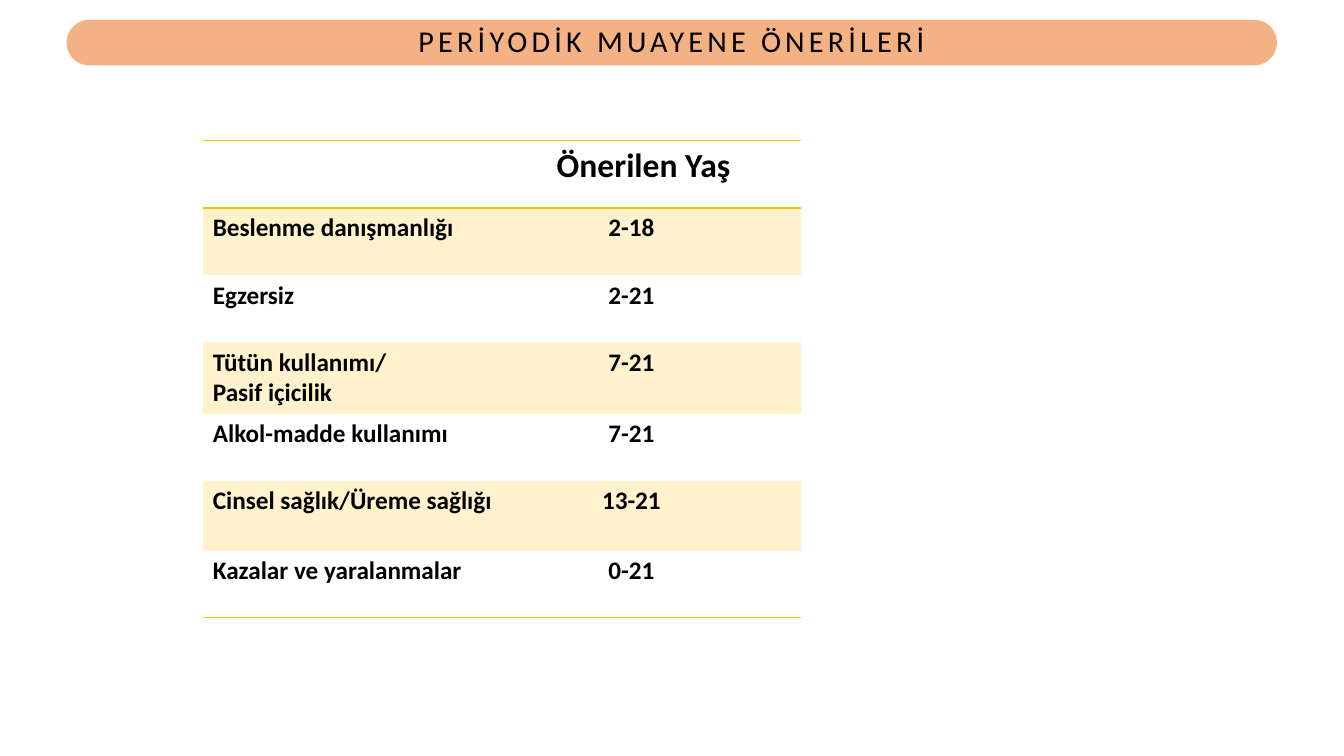
from pptx import Presentation
from pptx import util as u
from pptx.dml.color import RGBColor
from pptx.enum import shapes, text
from pptx.oxml import parse_xml
from pptx.oxml.ns import nsdecls

NO_GRID_STYLE = "{2D5ABB26-0587-4C30-8999-92F81FD0307C}"
HEADER = "Önerilen Yaş"
RECOMMENDATIONS = [
    (["Beslenme danışmanlığı"], "2-18"),
    (["Egzersiz"], "2-21"),
    (["Tütün kullanımı/", "Pasif içicilik"], "7-21"),
    (["Alkol-madde kullanımı"], "7-21"),
    (["Cinsel sağlık/Üreme sağlığı"], "13-21"),
    (["Kazalar ve yaralanmalar"], "0-21"),
]
TALL_ROWS = (3, 5)


def color(hex_code):
    return RGBColor.from_string(hex_code)


def write(frame, lines, size=18, bold=True, align=text.PP_ALIGN.LEFT,
          font="Calibri", ink="000000", spacing=0, line_spacing=None):
    for index, line in enumerate(lines):
        paragraph = frame.paragraphs[0] if index == 0 else frame.add_paragraph()
        paragraph.alignment = align
        paragraph.line_spacing = line_spacing
        run = paragraph.add_run()
        run.text = line
        run.font.name, run.font.size, run.font.bold = font, u.Pt(size), bold
        run.font.color.rgb = color(ink)
        if spacing:
            run.font._element.set("spc", str(spacing * 100))


class MuayeneSlide:
    bar = "F4B183"
    accent = "FFC000"
    tint = 20

    def __init__(self, deck):
        self.slide = deck.slides.add_slide(deck.slide_layouts[6])

    def title_bar(self, title, left, top, width, height):
        bar = self.slide.shapes.add_shape(
            shapes.MSO_SHAPE.ROUNDED_RECTANGLE,
            u.Cm(left), u.Cm(top), u.Cm(width), u.Cm(height))
        bar.adjustments[0] = 0.5
        bar.shadow.inherit = False
        bar.fill.solid()
        bar.fill.fore_color.rgb = color(self.bar)
        bar.line.fill.background()
        frame = bar.text_frame
        frame.margin_top = frame.margin_bottom = 0
        frame.vertical_anchor = text.MSO_ANCHOR.MIDDLE
        write(frame, [title], size=21.6, bold=False, spacing=3,
              align=text.PP_ALIGN.CENTER, line_spacing=0.9)

    def table(self, left, top, column_width, row_heights):
        table = self.slide.shapes.add_table(
            len(row_heights), 2, u.Cm(left), u.Cm(top),
            u.Cm(2 * column_width), u.Cm(sum(row_heights))).table
        table.first_row = table.horz_banding = False
        table._tbl.tblPr[0].text = NO_GRID_STYLE
        for column in table.columns:
            column.width = u.Cm(column_width)
        for row, height in zip(table.rows, row_heights):
            row.height = u.Cm(height)
        return table

    def rule(self, cell, side):
        cell._tc.get_or_add_tcPr().append(parse_xml(
            f'<a:ln{side} {nsdecls("a")} w="12700"><a:solidFill>'
            f'<a:srgbClr val="{self.accent}"/></a:solidFill></a:ln{side}>'))

    def band(self, cell):
        cell.fill.solid()
        cell.fill.fore_color.rgb = color(self.accent)
        tone = cell._tc.tcPr.find(".//" + "{*}srgbClr")
        tone.append(parse_xml(
            f'<a:alpha {nsdecls("a")} val="{self.tint * 1000}"/>'))


def main():
    deck = Presentation()
    deck.slide_width, deck.slide_height = u.Cm(33.87), u.Cm(19.05)
    page = MuayeneSlide(deck)
    page.title_bar("PERİYODİK MUAYENE ÖNERİLERİ", 1.68, 0.5, 30.5, 1.15)

    # Table of recommended ages
    heights = [1.76 if row in TALL_ROWS else 1.69
               for row in range(len(RECOMMENDATIONS) + 1)]
    ages = page.table(5.11, 3.55, 7.54, heights)

    # Header row
    for cell in ages.rows[0].cells:
        page.rule(cell, "T")
        page.rule(cell, "B")
    age_header = ages.cell(0, 1)
    age_header.margin_left = u.Cm(1.38)
    write(age_header.text_frame, [HEADER], size=24)

    # Topic rows, every other one tinted
    for row, (topic, age) in enumerate(RECOMMENDATIONS, start=1):
        topic_cell, age_cell = ages.cell(row, 0), ages.cell(row, 1)
        write(topic_cell.text_frame, topic)
        age_cell.margin_right = u.Cm(1.27)
        write(age_cell.text_frame, [age], align=text.PP_ALIGN.CENTER)
        for cell in (topic_cell, age_cell):
            if row == len(RECOMMENDATIONS):
                page.rule(cell, "B")
            if row % 2:
                page.band(cell)

    deck.save("out.pptx")


if __name__ == "__main__":
    main()
